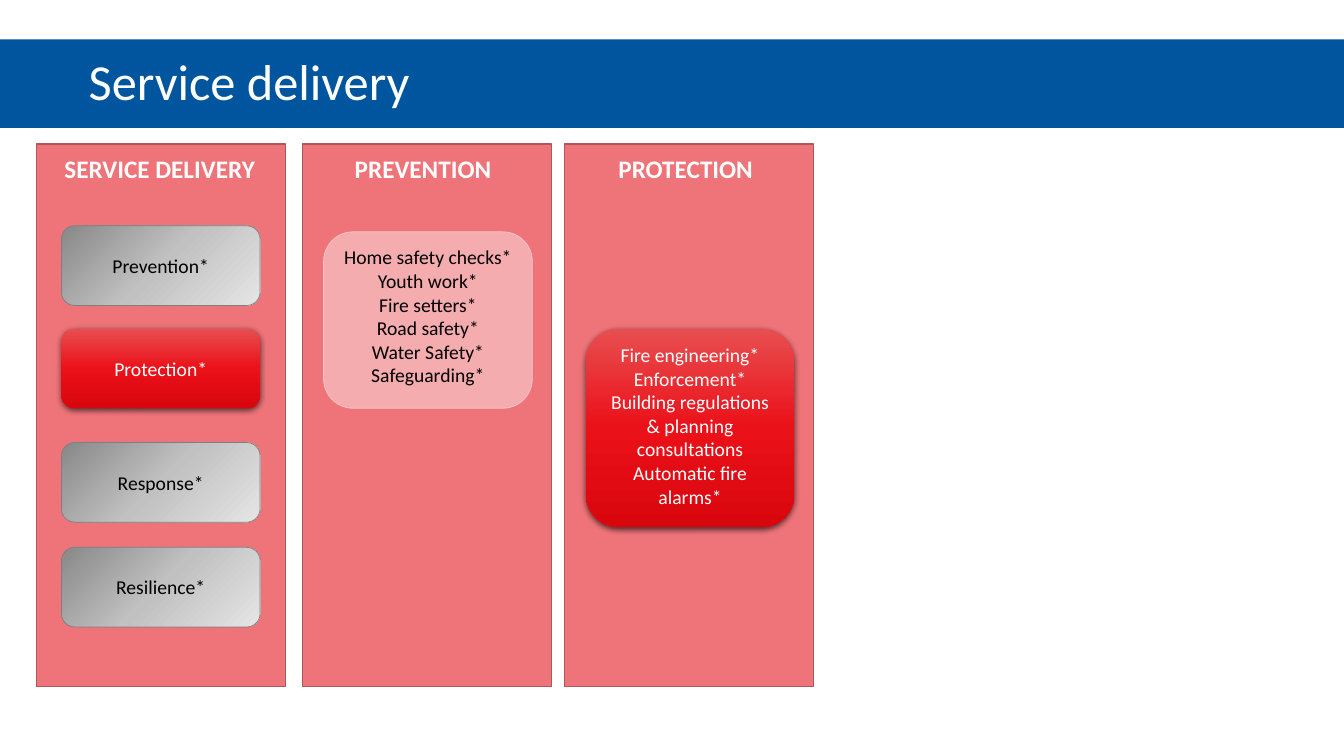
from pptx import Presentation
from pptx.dml.color import RGBColor
from pptx.enum.shapes import MSO_SHAPE as SHAPE
from pptx.enum.text import MSO_ANCHOR as ANCHOR, MSO_AUTO_SIZE as AUTO_SIZE, PP_ALIGN as ALIGN
from pptx.oxml import parse_xml
from pptx.oxml.ns import nsdecls, qn
from pptx.util import Inches, Pt

GREY = dict(fill=("888888", "C1C1C1", "E5E5E5"), angle=45, line="7F7F7F", ink="000000")
RED = dict(fill=("E84E50", "EB1119", "DA060E"), angle=90, ink="FFFFFF", raised=True)
PINK = dict(fill="F5ACAF", line="F8C7C9", ink="000000")


def color(hex_code):
    return RGBColor.from_string(hex_code)


class Board:
    """Holds the style and the current slide."""
    font = "Calibri"
    panel_top, panel_width, panel_height = 1.43, 2.47, 5.38

    def __init__(self, slide):
        self.slide = slide

    def add_lines(self, shape, lines, size, ink, bold=False, align=ALIGN.LEFT):
        frame = shape.text_frame
        frame.text = "\n".join(lines)
        for paragraph in frame.paragraphs:
            paragraph.alignment = align
            for run in paragraph.runs:
                run.font.name, run.font.size, run.font.bold = self.font, Pt(size), bold
                run.font.color.rgb = color(ink)
        return frame

    def box(self, shapes, kind, at, fill, line=None, line_width=0.5, angle=0):
        shape = shapes.add_shape(kind, *map(Inches, at))
        shape.shadow.inherit = False
        if isinstance(fill, tuple):
            self.gradient(shape, fill, angle)
        else:
            shape.fill.solid()
            shape.fill.fore_color.rgb = color(fill)
        if line:
            shape.line.color.rgb = color(line)
            shape.line.width = Pt(line_width)
        else:
            shape.line.fill.background()
        return shape

    def gradient(self, shape, stops, angle):
        shape.fill.gradient()
        step = 100000 // (len(stops) - 1)
        marks = "".join(f'<a:gs pos="{i * step}"><a:srgbClr val="{stop}"/></a:gs>'
                        for i, stop in enumerate(stops))
        properties = shape.element.spPr
        properties.replace(properties.find(qn("a:gradFill")), parse_xml(
            f'<a:gradFill {nsdecls("a")} rotWithShape="1"><a:gsLst>{marks}</a:gsLst>'
            f'<a:lin ang="{angle * 60000}" scaled="0"/></a:gradFill>'))

    def drop_shadow(self, shape):
        shape.element.spPr.find(qn("a:effectLst")).append(parse_xml(
            f'<a:outerShdw {nsdecls("a")} blurRad="{Pt(4.5)}" dist="{Pt(1.5)}" dir="5400000" '
            'algn="ctr" rotWithShape="0"><a:srgbClr val="000000"><a:alpha val="63000"/>'
            '</a:srgbClr></a:outerShdw>'))

    def banner(self, title):
        band = self.box(self.slide.shapes, SHAPE.RECTANGLE, (0, 0.39, 13.33, 0.88), "00559F")
        frame = self.add_lines(band, [title], 36, "FFFFFF")
        frame.margin_left = Inches(0.88)
        frame.vertical_anchor = ANCHOR.MIDDLE
        frame.paragraphs[0].line_spacing = 0.9

    def panel(self, left, heading, heading_width):
        shapes = self.slide.shapes.add_group_shape().shapes
        self.box(shapes, SHAPE.RECTANGLE,
                 (left, self.panel_top, self.panel_width, self.panel_height),
                 "EE7479", "B0565A", 1)
        heading_left = left + (self.panel_width - heading_width) / 2
        label = shapes.add_textbox(*map(Inches, (heading_left, 1.47, heading_width, 0.4)))
        frame = self.add_lines(label, [heading], 18, "FFFFFF", bold=True)
        frame.word_wrap = False
        frame.auto_size = AUTO_SIZE.SHAPE_TO_FIT_TEXT
        return shapes

    def card(self, shapes, at, lines, look, anchor=ANCHOR.TOP):
        card = self.box(shapes, SHAPE.ROUNDED_RECTANGLE, at, look["fill"],
                        look.get("line"), angle=look.get("angle", 0))
        if look.get("raised"):
            self.drop_shadow(card)
        frame = self.add_lines(card, lines, 14, look["ink"], align=ALIGN.CENTER)
        frame.word_wrap = True
        frame.vertical_anchor = anchor


def main():
    deck = Presentation()
    deck.slide_width, deck.slide_height = Inches(13.33), Inches(7.5)
    board = Board(deck.slides.add_slide(deck.slide_layouts[6]))
    board.banner("Service delivery")

    # Panels
    delivery = board.panel(0.36, "SERVICE DELIVERY", 2.11)
    board.panel(3, "PREVENTION", 1.63)
    board.panel(5.6, "PROTECTION", 1.6)

    # Service areas, with the current one in red
    for area, top, look in (("Prevention*", 2.24, GREY), ("Protection*", 3.26, RED),
                            ("Response*", 4.39, GREY), ("Resilience*", 5.43, GREY)):
        board.card(delivery, (0.61, top, 1.97, 0.79), [area], look, ANCHOR.MIDDLE)

    # Activities within the areas
    activities = board.slide.shapes
    board.card(activities, (3.21, 2.3, 2.07, 1.75),
               ["Home safety checks*", "Youth work*", "Fire setters*",
                "Road safety*", "Water Safety*", "Safeguarding*"], PINK)
    board.card(activities, (5.81, 3.26, 2.07, 1.97),
               ["Fire engineering*", "Enforcement*",
                "Building regulations & planning consultations",
                "Automatic fire alarms*"], RED)

    deck.save("out.pptx")


if __name__ == "__main__":
    main()
